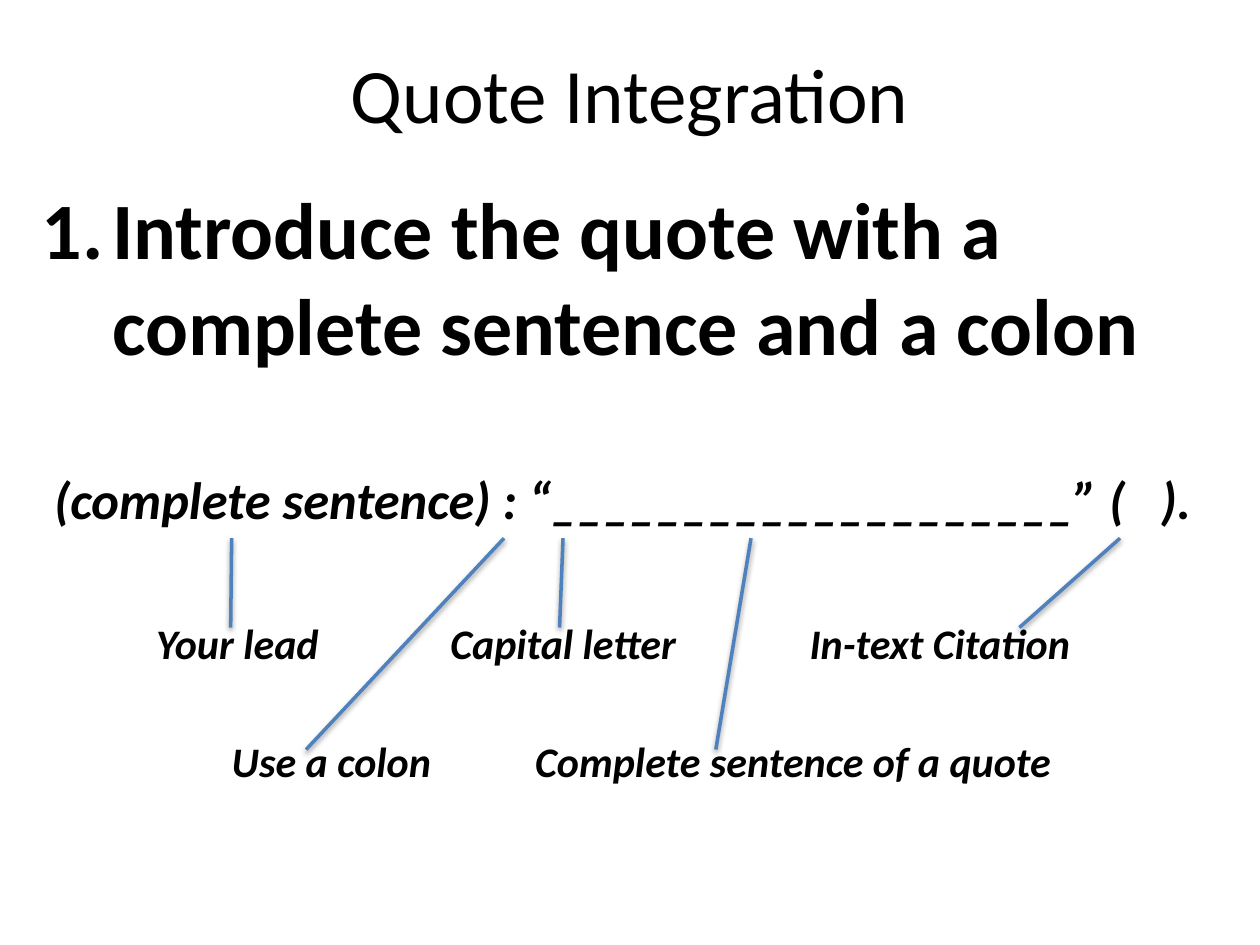
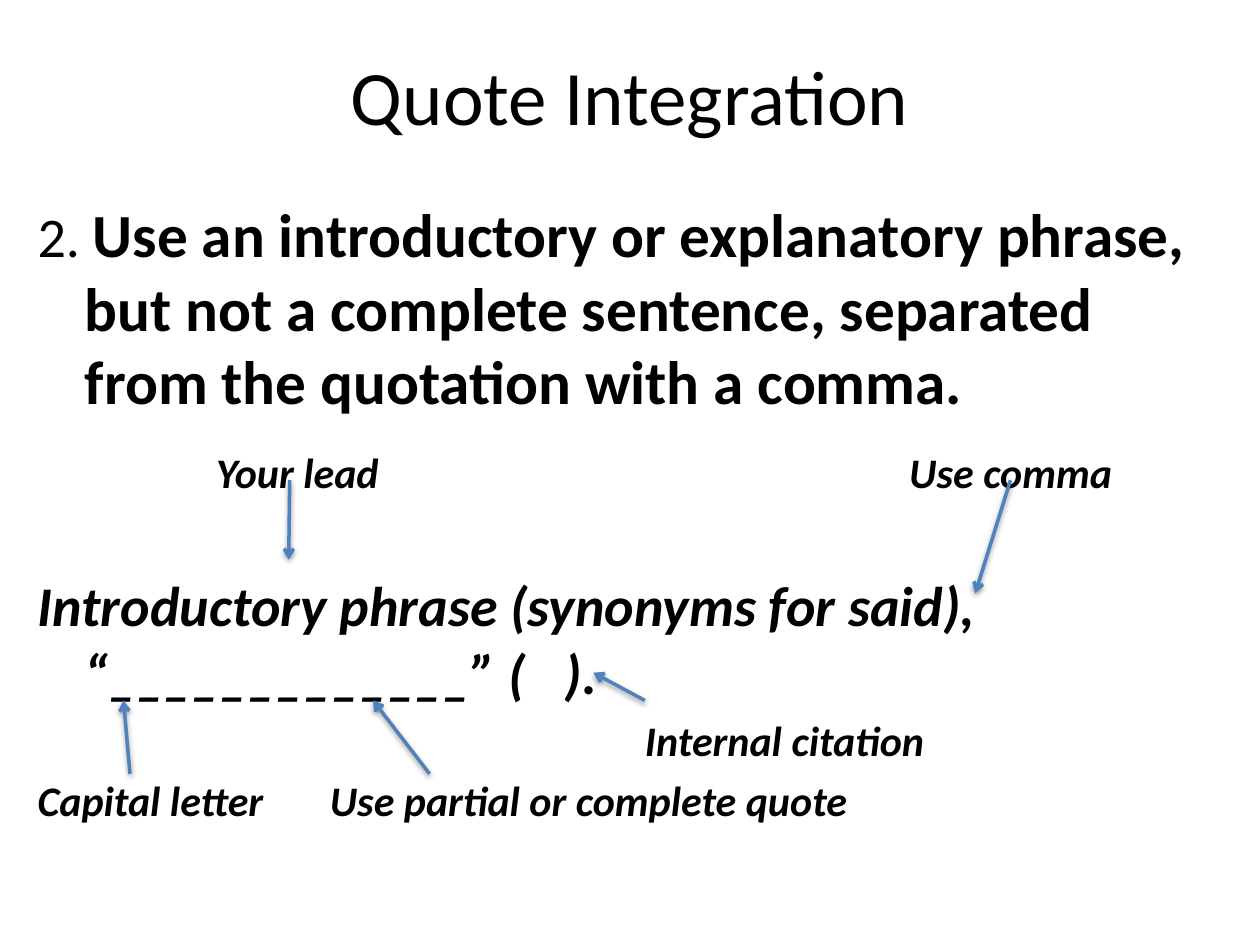
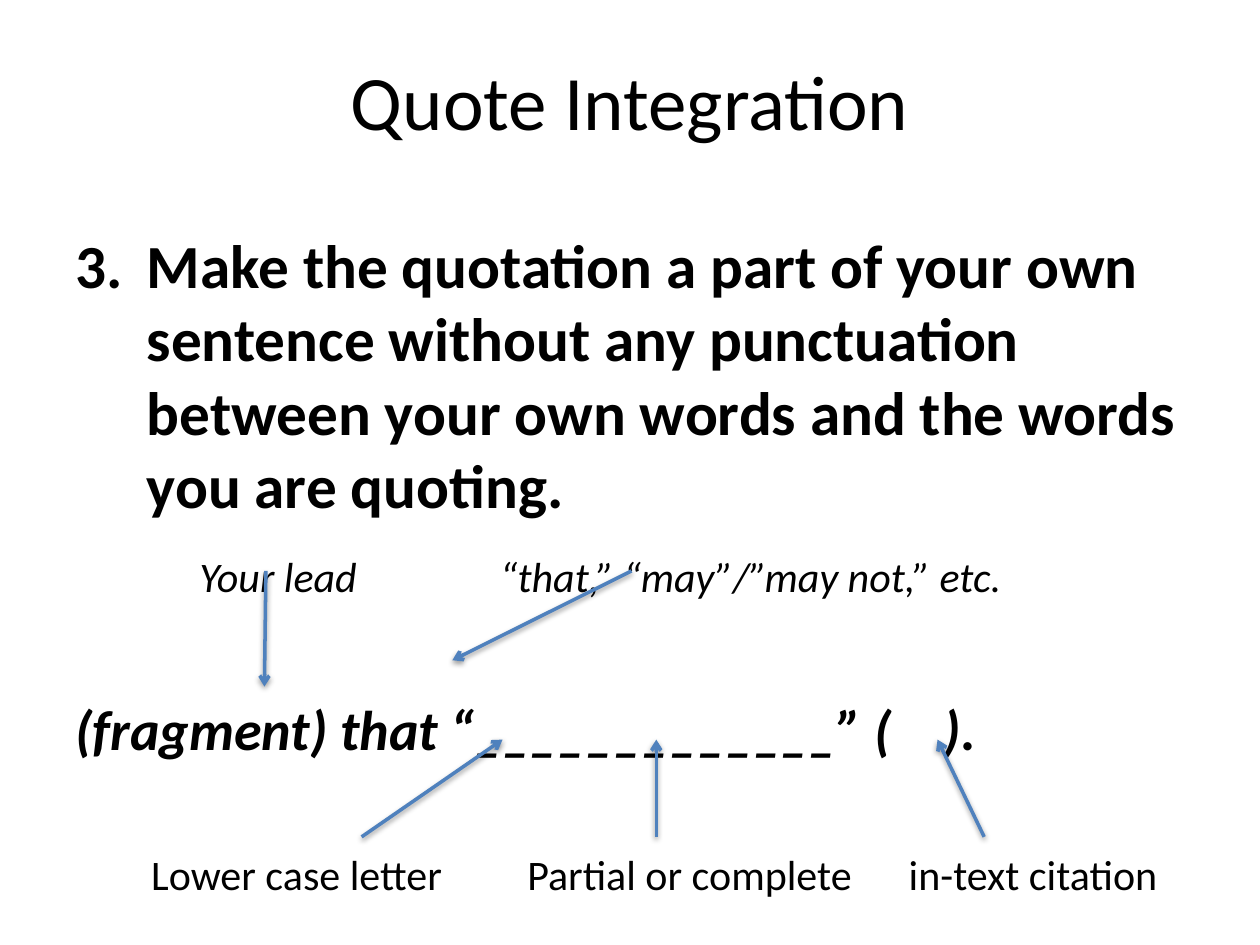
"""Build three slides on ways to integrate a quote."""
import pptx
import pptx.util
import pptx.dml.color
import pptx.enum.shapes
import pptx.enum.text
import pptx.oxml
import pptx.oxml.ns
from lxml import etree

Cm, Pt = pptx.util.Cm, pptx.util.Pt
BLACK = pptx.dml.color.RGBColor(0x00, 0x00, 0x00)
BLUE = pptx.dml.color.RGBColor(0x4F, 0x81, 0xBD)
WHITE = pptx.dml.color.RGBColor(0xFF, 0xFF, 0xFF)
FONT = "Calibri"
TITLE = "Quote Integration"
SHADOW = (
    f'<a:effectLst {pptx.oxml.ns.nsdecls("a")}>'
    '<a:outerShdw blurRad="40000" dist="20000" dir="5400000" rotWithShape="0">'
    '<a:srgbClr val="000000"><a:alpha val="38000"/></a:srgbClr>'
    '</a:outerShdw></a:effectLst>'
)

# rows: top, size, style, then (left, text) for each part
SLIDES = [
    dict(
        title=2.22,
        rule=dict(
            place=(0.59, 3.5, 24.23, 5), hang=1.42, start=1,
            runs=[("Introduce the quote with a complete sentence and a colon",
                   45.7, True)]),
        rows=[
            (9.41, 30, "bi", [
                (1.09, "(complete sentence) : “____________________” ("),
                (23.4, ").")]),
            (12.44, 24, "bi", [
                (3.15, "Your lead"),
                (9.08, "Capital letter"),
                (16.32, "In-text Citation")]),
            (14.82, 24, "bi", [
                (4.67, "Use a colon"),
                (10.79, "Complete sentence of a quote")]),
        ],
        arrow=False,
        lines=[
            (4.65, 12.65, 4.67, 10.85),
            (11.28, 12.65, 11.35, 10.85),
            (6.17, 15.11, 10.16, 10.85),
            (20.55, 12.65, 22.58, 10.85),
            (14.43, 15.11, 15.14, 10.85),
        ],
    ),
    dict(
        title=2.31,
        rule=dict(
            place=(0.51, 3.84, 24.18, 5), hang=0.95, start=None,
            runs=[("2. ", 32, False),
                  ("Use an introductory or explanatory phrase, but not a complete "
                   "sentence, separated from the quotation with a comma.",
                   35, True)]),
        rows=[
            (9, 24, "bi", [(4.36, "Your lead"), (18.33, "Use comma")]),
            (11.5, 32, "bi", [(0.76, "Introductory phrase (synonyms for said),")]),
            (12.88, 32, "bi", [(1.71, "“_____________” ("), (11.39, ").")]),
            (14.41, 24, "bi", [(13, "Internal citation")]),
            (15.62, 24, "bi", [
                (0.76, "Capital letter"),
                (6.65, "Use partial or complete quote")]),
        ],
        arrow=True,
        lines=[
            (5.84, 9.68, 5.82, 11.28),
            (20.37, 9.68, 19.66, 11.96),
            (2.62, 15.6, 2.49, 14.12),
            (8.66, 15.6, 7.52, 14.12),
            (13, 14.12, 11.96, 13.56),
        ],
    ),
    dict(
        title=2.49,
        rule=dict(
            place=(1.27, 4.45, 23.47, 6.5), hang=1.44, start=3,
            runs=[("Make the quotation a part of your own sentence without any "
                   "punctuation between your own words and the words you are "
                   "quoting.", 35, True)]),
        rows=[
            (11.1, 24, "i", [
                (4.02, "Your lead"),
                (10.08, "“that,” “may”/”may not,” etc.")]),
            (14, 32, "bi", [
                (1.52, "(fragment) that “_____________” ("),
                (19.03, ").")]),
            (17.1, 24, "", [
                (3.05, "Lower case letter"),
                (10.63, "Partial or complete"),
                (18.32, "in-text citation")]),
        ],
        arrow=True,
        lines=[
            (5.36, 11.51, 5.33, 13.84),
            (7.29, 16.87, 10.13, 14.91),
            (13.23, 16.87, 13.23, 14.91),
            (19.84, 16.87, 18.9, 14.91),
            (12.73, 11.51, 9.12, 13.31),
        ],
    ),
]


def add_box(slide, place):
    """Add a wrapping text box and return its frame."""
    frame = slide.shapes.add_textbox(*map(Cm, place)).text_frame
    frame.word_wrap = True
    return frame


def set_font(font, size, style=""):
    """Set the shared face and colour with the given size and style."""
    font.name, font.size = FONT, Pt(size)
    font.bold, font.italic = "b" in style, "i" in style
    font.color.rgb = BLACK


def add_title(slide, height):
    """Add the centred title."""
    frame = add_box(slide, (1.27, 0.76, 22.86, height))
    frame.vertical_anchor = pptx.enum.text.MSO_ANCHOR.MIDDLE
    para = frame.paragraphs[0]
    para.text = TITLE
    para.alignment = pptx.enum.text.PP_ALIGN.CENTER
    set_font(para.font, 44)


def add_rule(slide, place, hang, start, runs):
    """Add the numbered rule with its hanging indent."""
    para = add_box(slide, place).paragraphs[0]
    set_font(para.font, runs[-1][1], "b")
    props = para._p.get_or_add_pPr()
    props.set("marL", str(Cm(hang)))
    props.set("indent", str(-Cm(hang)))
    if start:
        qn = pptx.oxml.ns.qn
        mark = etree.Element(qn("a:buAutoNum"), type="arabicPeriod",
                             startAt=str(start))
        props.find(qn("a:defRPr")).addprevious(mark)
    for text, size, bold in runs:
        run = para.add_run()
        run.text = text
        set_font(run.font, size, "b" if bold else "")


def add_row(slide, top, size, style, parts):
    """Add the parts of one row, each in a box without margins."""
    for left, text in parts:
        width = size * 0.02 * len(text) + 0.5
        frame = add_box(slide, (left, top, width, size * 0.043))
        frame.word_wrap = False
        frame.margin_left = frame.margin_right = 0
        frame.margin_top = frame.margin_bottom = 0
        para = frame.paragraphs[0]
        para.text = text
        para.alignment = pptx.enum.text.PP_ALIGN.LEFT
        set_font(para.font, size, style)


def add_line(slide, ends, arrow):
    """Add a pointer with a soft shadow."""
    kind = pptx.enum.shapes.MSO_CONNECTOR.STRAIGHT
    line = slide.shapes.add_connector(kind, *map(Cm, ends))
    line.line.color.rgb = BLUE
    line.line.width = Pt(2)
    props = line._element.spPr
    if arrow:
        stroke = props.find(pptx.oxml.ns.qn("a:ln"))
        etree.SubElement(stroke, pptx.oxml.ns.qn("a:tailEnd"), type="arrow")
    props.append(pptx.oxml.parse_xml(SHADOW))


def main():
    """Build and save the deck."""
    deck = pptx.Presentation()
    deck.slide_width, deck.slide_height = Cm(25.4), Cm(19.05)
    for page in SLIDES:
        slide = deck.slides.add_slide(deck.slide_layouts[6])
        slide.background.fill.solid()
        slide.background.fill.fore_color.rgb = WHITE
        add_title(slide, page["title"])
        add_rule(slide, **page["rule"])
        for row in page["rows"]:
            add_row(slide, *row)
        for ends in page["lines"]:
            add_line(slide, ends, page["arrow"])
    deck.save("out.pptx")


if __name__ == "__main__":
    main()
